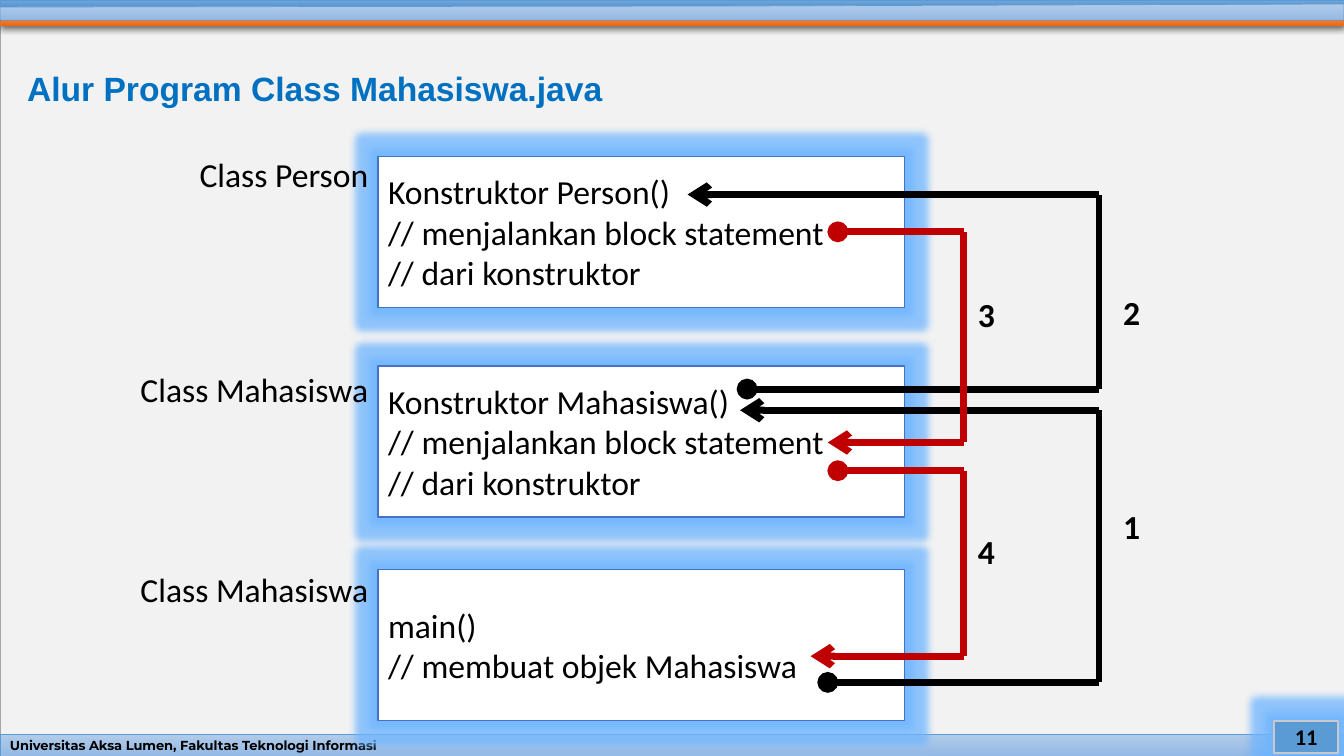
from lxml import etree
from pptx import Presentation
from pptx.dml.color import RGBColor
from pptx.enum.shapes import MSO_CONNECTOR, MSO_SHAPE
from pptx.enum.text import MSO_ANCHOR, PP_ALIGN
from pptx.oxml.ns import qn
from pptx.util import Inches, Pt

RECTANGLE = MSO_SHAPE.RECTANGLE
STRAIGHT = MSO_CONNECTOR.STRAIGHT
MIDDLE = MSO_ANCHOR.MIDDLE
LEFT, CENTER, RIGHT = PP_ALIGN.LEFT, PP_ALIGN.CENTER, PP_ALIGN.RIGHT
WIDTH, HEIGHT = 13.33, 7.5
BLACK, RED, BLUE = "000000", "C00000", "5B9BD5"
PALE_BLUE = ("B1CBE9", "93B9E4")


def color(hex_string):
    return RGBColor.from_string(hex_string)


def add_effect(shape, tag, hex_string, alpha, **settings):
    effects = shape._element.spPr.find(qn("a:effectLst"))
    effect = etree.SubElement(effects, qn(tag), settings)
    tint = etree.SubElement(effect, qn("a:srgbClr"), val=hex_string)
    etree.SubElement(tint, qn("a:alpha"), val=str(alpha * 1000))


def add_glow(shape):
    add_effect(shape, "a:glow", "6FB5FF", 75, rad=str(Pt(11)))


def paint(shape, fill, line=None, line_width=0.5):
    shape.shadow.inherit = False
    if isinstance(fill, tuple):
        shape.fill.gradient()
        shape.fill.gradient_angle = 270
        for stop, hex_string in zip(shape.fill.gradient_stops, fill):
            stop.color.rgb = color(hex_string)
    else:
        shape.fill.solid()
        shape.fill.fore_color.rgb = color(fill)
    if line:
        shape.line.color.rgb = color(line)
        shape.line.width = Pt(line_width)
    else:
        shape.line.fill.background()


def add_box(slide, box, fill, line=None, line_width=0.5):
    shape = slide.shapes.add_shape(RECTANGLE, *map(Inches, box))
    paint(shape, fill, line, line_width)
    return shape


def add_band(slide, points, fill, line=None):
    start, *rest = [(Inches(x), Inches(y)) for x, y in points]
    builder = slide.shapes.build_freeform(*start)
    builder.add_line_segments(rest)
    band = builder.convert_to_shape()
    paint(band, fill, line)
    return band


def write(shape, text, size=24, font="Calibri", hex_string=BLACK, bold=False, align=LEFT):
    frame = shape.text_frame
    frame.word_wrap = True
    frame.vertical_anchor = MIDDLE
    frame.margin_top = frame.margin_bottom = 0
    frame.text = text
    for paragraph in frame.paragraphs:
        paragraph.alignment = align
        for run in paragraph.runs:
            run.font.size = Pt(size)
            run.font.name = font
            run.font.bold = bold
            run.font.color.rgb = color(hex_string)


def add_label(slide, box, text, **style):
    write(slide.shapes.add_textbox(*map(Inches, box)), text, **style)


def add_segment(slide, start, end, hex_string, head=None, tail=None):
    segment = slide.shapes.add_connector(STRAIGHT, *map(Inches, (*start, *end)))
    segment.line.color.rgb = color(hex_string)
    segment.line.width = Pt(5)
    for tag, kind in (("a:headEnd", head), ("a:tailEnd", tail)):
        if kind:
            etree.SubElement(segment.line._get_or_add_ln(), qn(tag), type=kind)
    etree.SubElement(segment._element.spPr, qn("a:effectLst"))


def add_header(slide, left, top, width):
    right = left + width
    orange = add_band(
        slide,
        [(right, top + 0.26), (left, top + 0.26), (left + 0.03, top + 0.13), (right, top + 0.13)],
        ("F18C57", "E56C19"),
    )
    add_effect(orange, "a:outerShdw", BLACK, 63,
               blurRad=str(Pt(4.5)), dist=str(Pt(1.5)), dir="5400000")
    add_box(slide, (left, top, width, 0.11), ("71A6DB", "448ACA"), BLUE)
    add_band(
        slide,
        [(right, top + 0.2), (left, top + 0.2), (left, top + 0.07),
         (left + width * 0.55, top + 0.06), (right, top + 0.04)],
        PALE_BLUE, BLUE,
    )


def add_footer(slide, left, top, width, height):
    footer = (left, top, width, height)
    add_box(slide, footer, PALE_BLUE, BLUE)
    add_label(slide, footer, "Universitas Aksa Lumen, Fakultas Teknologi Informasi",
              size=9.3, font="Montserrat", bold=True)
    page_number = add_box(slide, (left + width - 0.69, top - 0.14, 0.63, 0.32), BLUE, "C9C9C9", 1.5)
    add_glow(page_number)
    write(page_number, "11", size=16, bold=True, align=CENTER)


def add_class(slide, left, top, width, height, name, name_top, code):
    code_box = add_box(slide, (left, top, width, height), "FFFFFF", "4472C4", 1)
    add_glow(code_box)
    write(code_box, code)
    add_label(slide, (left - 3.68, name_top, 3.68, 0.39), name, align=RIGHT)


def add_call(slide, start, bend, end, number, number_at, hex_string):
    upper_corner, lower_corner = (bend, start[1]), (bend, end[1])
    add_segment(slide, start, upper_corner, hex_string, head="oval")
    add_segment(slide, upper_corner, lower_corner, hex_string)
    add_segment(slide, lower_corner, end, hex_string, tail="arrow")
    add_label(slide, (*number_at, 0.46, 0.39), number, bold=True)


def add_flow(slide, left, top):
    constructor_body = "\n// menjalankan block statement\n// dari konstruktor"
    classes = [
        (0, "Class Person", -0.02, "Konstruktor Person()" + constructor_body),
        (2.08, "Class Mahasiswa", 2.11, "Konstruktor Mahasiswa()" + constructor_body),
        (4.1, "Class Mahasiswa", 4.1, "main()\n// membuat objek Mahasiswa"),
    ]
    for offset, name, name_offset, code in classes:
        add_class(slide, left, top + offset, 5.22, 1.5, name, top + name_offset, code)

    outer, inner = 7.15, 5.81
    calls = [
        ("1", (4.46, 5.22), outer, (3.59, 2.52), (7.29, 3.47), BLACK),
        ("2", (3.66, 2.31), outer, (3.07, 0.38), (7.29, 1.35), BLACK),
        ("3", (4.56, 0.75), inner, (4.46, 2.84), (5.85, 1.37), RED),
        ("4", (4.56, 3.12), inner, (4.29, 4.96), (5.85, 3.72), RED),
    ]
    for number, start, bend, end, number_at, hex_string in calls:
        start, end, number_at = [(left + x, top + y) for x, y in (start, end, number_at)]
        add_call(slide, start, left + bend, end, number, number_at, hex_string)


def main():
    presentation = Presentation()
    presentation.slide_width = Inches(WIDTH)
    presentation.slide_height = Inches(HEIGHT)
    slide = presentation.slides.add_slide(presentation.slide_layouts[6])
    add_box(slide, (0, 0.04, WIDTH, HEIGHT - 0.04), "F2F2F2", "A5A5A5")
    add_header(slide, 0, 0, WIDTH)
    add_footer(slide, 0, 7.29, WIDTH, 0.21)
    add_label(slide, (0.17, 0.53, 12.85, 0.68), "Alur Program Class Mahasiswa.java",
              font="Arial", hex_string="0070C0", bold=True)
    add_flow(slide, 3.75, 1.55)
    presentation.save("out.pptx")


if __name__ == "__main__":
    main()
